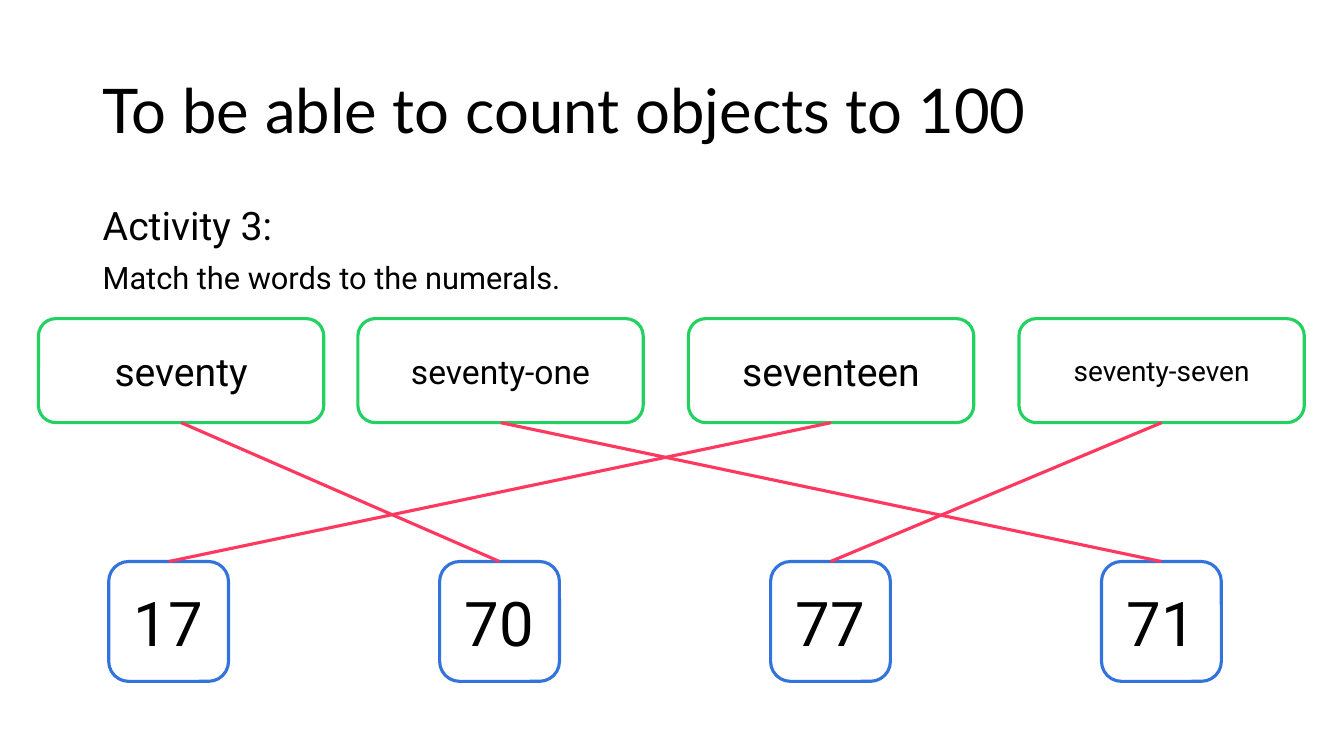
from pptx import Presentation
from pptx.dml.color import RGBColor
from pptx.enum import shapes, text
from pptx.oxml.ns import qn
from pptx.util import Cm, Pt
from lxml import etree

TITLE = "To be able to count objects to 100"
INSTRUCTIONS = [("Activity 3:", 28), ("Match the words to the numerals.", 22)]
WORDS = [
    ("seventy", 28, 0.97, "70"),
    ("seventy-one", 24, 9.02, "71"),
    ("seventeen", 28, 17.35, "17"),
    ("seventy-seven", 20, 25.68, "77"),
]
NUMERALS = ["17", "70", "77", "71"]

BLACK = RGBColor(0x00, 0x00, 0x00)
WHITE = RGBColor(0xFF, 0xFF, 0xFF)
GREEN = RGBColor(0x23, 0xD1, 0x60)
BLUE = RGBColor(0x32, 0x73, 0xDC)
RED = RGBColor(0xFF, 0x38, 0x60)

LINE_WIDTH = Pt(2.25)
WORD_TOP, WORD_WIDTH, WORD_HEIGHT = 8.03, 7.19, 2.62
NUMERAL_LEFT, NUMERAL_TOP, NUMERAL_SIDE, NUMERAL_PITCH = 2.74, 14.15, 3.02, 8.34


def style_font(para, size, name="Roboto"):
    para.font.size = Pt(size)
    para.font.name = name
    para.font.color.rgb = BLACK


def add_text(page, left, top, width, height, lines, name, anchor):
    box = page.shapes.add_textbox(Cm(left), Cm(top), Cm(width), Cm(height))
    frame = box.text_frame
    frame.word_wrap = True
    frame.vertical_anchor = anchor
    for index, (line, size) in enumerate(lines):
        para = frame.add_paragraph() if index else frame.paragraphs[0]
        para.text = line
        para.line_spacing = 0.9
        if index:
            para.space_before = Pt(10)
        style_font(para, size, name)


def add_card(page, left, top, width, height, label, size, outline):
    card = page.shapes.add_shape(
        shapes.MSO_SHAPE.ROUNDED_RECTANGLE, Cm(left), Cm(top), Cm(width), Cm(height))
    card.shadow.inherit = False
    card.fill.solid()
    card.fill.fore_color.rgb = WHITE
    card.line.color.rgb = outline
    card.line.width = LINE_WIDTH
    frame = card.text_frame
    frame.word_wrap = True
    frame.vertical_anchor = text.MSO_ANCHOR.MIDDLE
    para = frame.paragraphs[0]
    para.text = label
    para.alignment = text.PP_ALIGN.CENTER
    style_font(para, size)
    return card


def add_match(page, word, numeral):
    match = page.shapes.add_connector(shapes.MSO_CONNECTOR.STRAIGHT, 0, 0, 0, 0)
    match.begin_connect(word, 2)
    match.end_connect(numeral, 0)
    match.line.color.rgb = RED
    match.line.width = LINE_WIDTH
    etree.SubElement(match._element.spPr, qn("a:effectLst"))


def main():
    deck = Presentation()
    deck.slide_width, deck.slide_height = Cm(33.87), Cm(19.05)
    page = deck.slides.add_slide(deck.slide_layouts[6])

    add_text(page, 2.34, 1.02, 24.38, 3.68, [(TITLE, 44)], "Lato", text.MSO_ANCHOR.MIDDLE)
    add_text(page, 2.34, 5.08, 29.21, 12.09, INSTRUCTIONS, "Roboto", text.MSO_ANCHOR.TOP)

    numeral_cards = {
        numeral: add_card(page, NUMERAL_LEFT + column * NUMERAL_PITCH, NUMERAL_TOP,
                          NUMERAL_SIDE, NUMERAL_SIDE, numeral, 44, BLUE)
        for column, numeral in enumerate(NUMERALS)
    }
    word_cards = [
        (add_card(page, left, WORD_TOP, WORD_WIDTH, WORD_HEIGHT, word, size, GREEN), numeral)
        for word, size, left, numeral in WORDS
    ]
    for word_card, numeral in word_cards:
        add_match(page, word_card, numeral_cards[numeral])

    deck.save("out.pptx")


if __name__ == "__main__":
    main()
